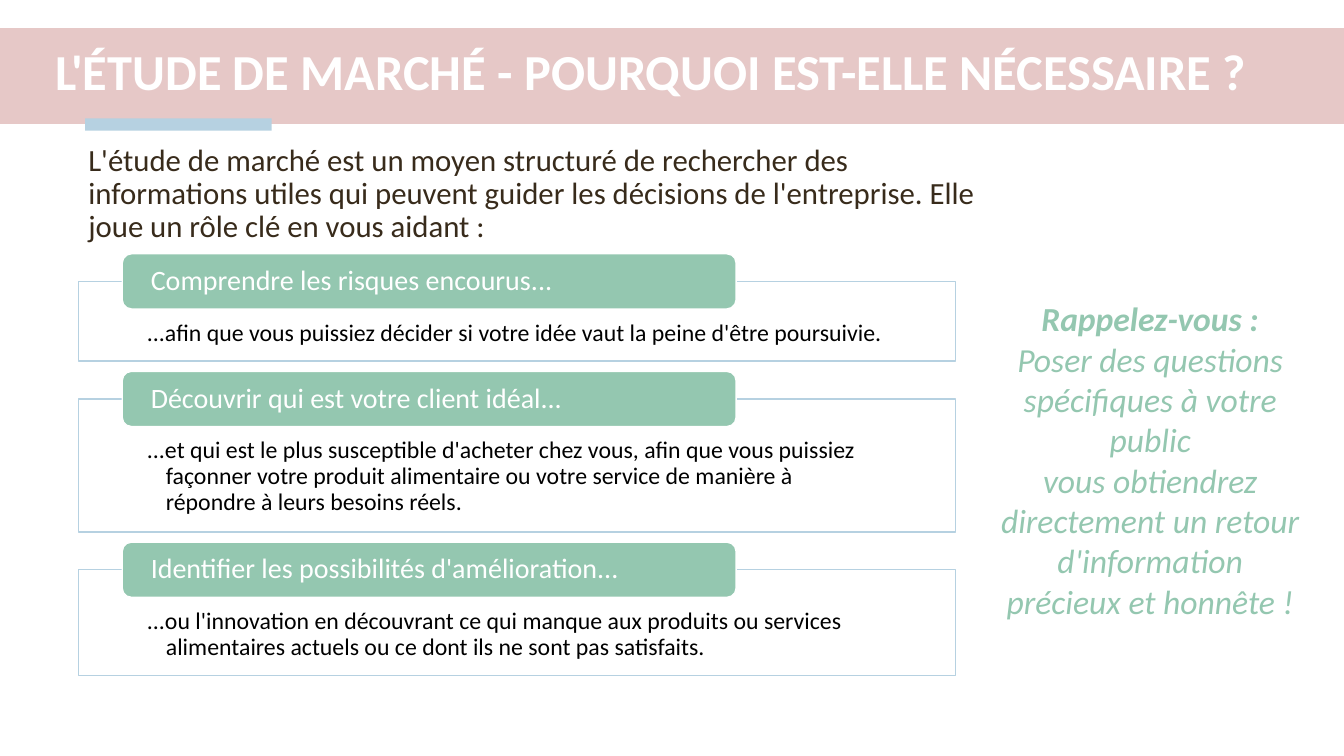
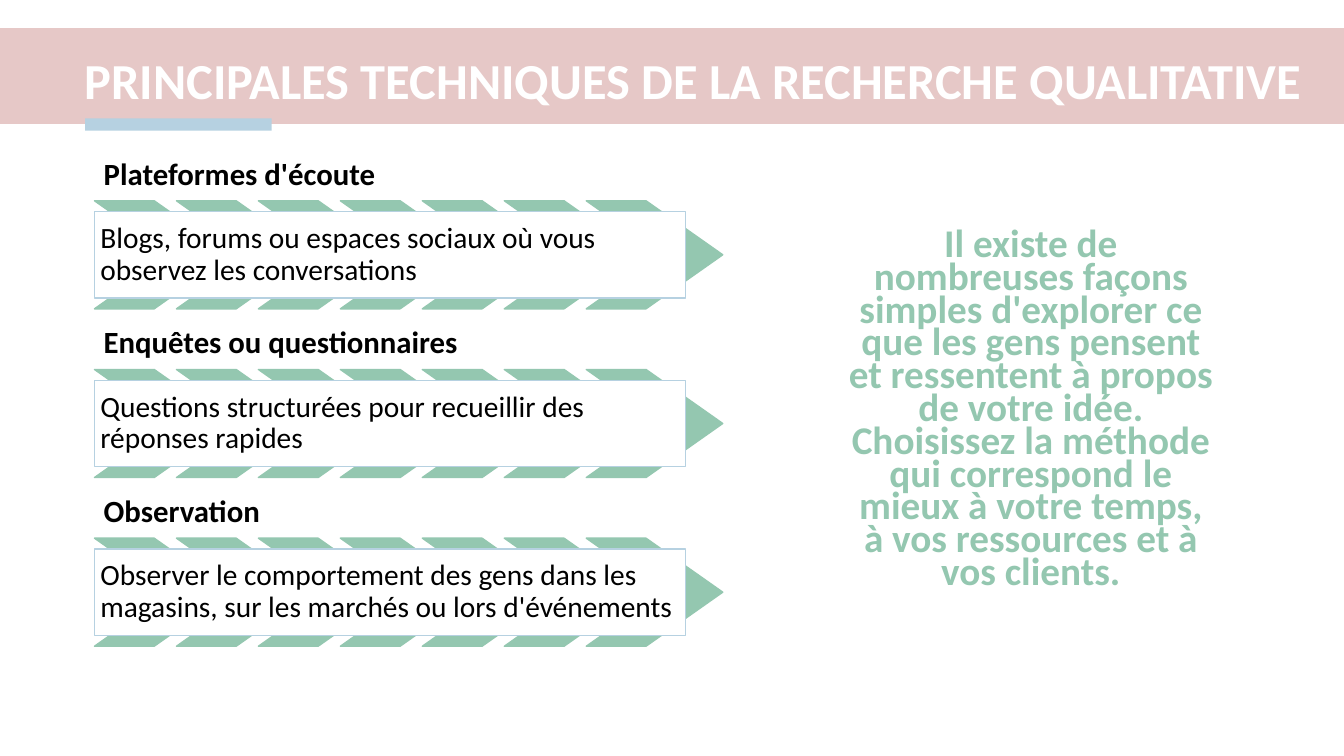
from pptx import Presentation
from pptx.dml.color import RGBColor
from pptx.enum.shapes import MSO_SHAPE
from pptx.enum.text import MSO_ANCHOR, MSO_AUTO_SIZE, PP_ALIGN
from pptx.util import Pt

WHITE = RGBColor(0xFF, 0xFF, 0xFF)
BLACK = RGBColor(0x00, 0x00, 0x00)
PINK = RGBColor(0xE6, 0xC8, 0xC7)
BLUE = RGBColor(0xB6, 0xD1, 0xE1)
GREEN = RGBColor(0x94, 0xC7, 0xB0)
BROWN = RGBColor(0x38, 0x2B, 0x1B)

DEFAULT_INSETS = (7.2, 3.6, 7.2, 3.6)

RISKS = [
    ("Comprendre les risques encourus...", 57,
     "...afin que vous puissiez décider si votre idée vaut la peine d'être poursuivie."),
    ("Découvrir qui est votre client idéal...", 95,
     "...et qui est le plus susceptible d'acheter chez vous, afin que vous puissiez "
     "façonner votre produit alimentaire ou votre service de manière à répondre à "
     "leurs besoins réels."),
    ("Identifier les possibilités d'amélioration...", 75.5,
     "...ou l'innovation en découvrant ce qui manque aux produits ou services "
     "alimentaires actuels ou ce dont ils ne sont pas satisfaits."),
]

TECHNIQUES = [
    ("Plateformes d'écoute",
     "Blogs, forums ou espaces sociaux où vous observez les conversations"),
    ("Enquêtes ou questionnaires",
     "Questions structurées pour recueillir des réponses rapides"),
    ("Observation",
     "Observer le comportement des gens dans les magasins, sur les marchés "
     "ou lors d'événements"),
]


class Deck:
    """Hold the shared style and the slide being built."""

    font_name = "Calibri"

    def __init__(self):
        """Start an empty widescreen presentation."""
        self.presentation = Presentation()
        self.presentation.slide_width = Pt(960)
        self.presentation.slide_height = Pt(540)
        self.slide = None

    def add_slide(self, title, left, top, width):
        """Add a slide with the title band, the accent bar and the title."""
        self.slide = self.presentation.slides.add_slide(self.presentation.slide_layouts[5])
        self.shape(MSO_SHAPE.RECTANGLE, 0, 20, 960, 68.5, PINK)
        self.shape(MSO_SHAPE.RECTANGLE, 60.8, 84.6, 133.2, 8.8, BLUE)
        placeholder = self.slide.shapes.title
        placeholder.left, placeholder.top = Pt(left), Pt(top)
        placeholder.width, placeholder.height = Pt(width), Pt(57)
        self.slide.shapes.element.append(placeholder.element)
        self.fill_text(placeholder, [title], 36, WHITE, bold=True, anchor=MSO_ANCHOR.MIDDLE)

    def shape(self, kind, left, top, width, height, fill, line=None):
        """Add a flat preset shape, outlined when a line colour is given."""
        shape = self.slide.shapes.add_shape(kind, Pt(left), Pt(top), Pt(width), Pt(height))
        shape.shadow.inherit = False
        shape.fill.solid()
        shape.fill.fore_color.rgb = fill
        if line is None:
            shape.line.fill.background()
        else:
            shape.line.color.rgb = line
            shape.line.width = Pt(1)
        return shape

    def text(self, left, top, width, height, lines, size, color, **style):
        """Add a text box."""
        shape = self.slide.shapes.add_textbox(Pt(left), Pt(top), Pt(width), Pt(height))
        self.fill_text(shape, lines, size, color, **style)

    def fill_text(self, shape, lines, size, color, bold=False, italic=False, bold_first=False,
                  align=PP_ALIGN.LEFT, anchor=MSO_ANCHOR.TOP, spacing=0.9,
                  insets=DEFAULT_INSETS, hanging=0):
        """Fill a shape with one paragraph, its lines parted by line breaks."""
        frame = shape.text_frame
        frame.word_wrap = True
        frame.auto_size = MSO_AUTO_SIZE.NONE
        frame.vertical_anchor = anchor
        frame.margin_left, frame.margin_top, frame.margin_right, frame.margin_bottom = map(Pt, insets)
        paragraph = frame.paragraphs[0]
        paragraph.alignment = align
        paragraph.line_spacing = spacing
        if hanging:
            properties = paragraph._p.get_or_add_pPr()
            properties.set("marL", str(Pt(hanging)))
            properties.set("indent", str(-Pt(hanging)))
        for index, line in enumerate(lines):
            if index:
                paragraph.add_line_break()
            run = paragraph.add_run()
            run.text = line
            run.font.name = self.font_name
            run.font.size = Pt(size)
            run.font.color.rgb = color
            run.font.bold = bold or (bold_first and index == 0)
            run.font.italic = italic

    def panel(self, top, height, heading, detail):
        """Add an outlined panel with a rounded heading over its top edge."""
        panel = self.shape(MSO_SHAPE.RECTANGLE, 56, top, 626.5, height, WHITE, BLUE)
        self.fill_text(panel, [detail], 17, BLACK, insets=(49, 28, 49, 9.4), hanging=13.5)
        tab = self.shape(MSO_SHAPE.ROUNDED_RECTANGLE, 87.3, top - 19.7, 438.5, 39.4, GREEN, WHITE)
        self.fill_text(tab, [heading], 20, WHITE, anchor=MSO_ANCHOR.MIDDLE,
                       insets=(18.5, 0, 18.5, 0))

    def technique(self, top, heading, detail):
        """Add a heading above a row of chevrons that carries a text box."""
        self.text(67.5, top, 417, 38, [heading], 22, BLACK, bold=True,
                  anchor=MSO_ANCHOR.BOTTOM, insets=(6.6,) * 4)
        for index in range(7):
            chevron = self.shape(MSO_SHAPE.CHEVRON, 67.5 + index * 58.55, top + 37.7,
                                 97.5, 77.2, GREEN, GREEN)
            chevron.adjustments[0] = 0.71
        box = self.shape(MSO_SHAPE.RECTANGLE, 67.5, top + 45.5, 422, 61.7, WHITE, BLUE)
        self.fill_text(box, [detail], 21, BLACK, anchor=MSO_ANCHOR.MIDDLE, insets=(4.2,) * 4)


def add_reasons(deck):
    """Build the slide on why market research is needed."""
    deck.add_slide("L'ÉTUDE DE MARCHÉ - POURQUOI EST-ELLE NÉCESSAIRE ?", 32.4, 24.5, 886)
    deck.text(56, 100, 663, 81,
              ["L'étude de marché est un moyen structuré de rechercher des informations utiles "
               "qui peuvent guider les décisions de l'entreprise. Elle joue un rôle clé en vous "
               "aidant :"], 22, BROWN, spacing=Pt(23.4))
    deck.text(707.8, 209.5, 227.5, 240,
              ["Rappelez-vous :", "Poser des questions spécifiques à votre public",
               "vous obtiendrez directement un retour d'information précieux et honnête !"],
              24, GREEN, italic=True, bold_first=True, align=PP_ALIGN.CENTER, spacing=1.0)
    top = 201
    for heading, height, detail in RISKS:
        deck.panel(top, height, heading, detail)
        top += height + 27


def add_techniques(deck):
    """Build the slide on qualitative research techniques."""
    deck.add_slide("PRINCIPALES TECHNIQUES DE LA RECHERCHE QUALITATIVE", 53.3, 31, 900.7)
    for index, (heading, detail) in enumerate(TECHNIQUES):
        deck.technique(105.7 + index * 120.5, heading, detail)
    deck.text(597, 162.7, 278.6, 241,
              ["Il existe de nombreuses façons simples d'explorer ce que les gens pensent et "
               "ressentent à propos de votre idée. Choisissez la méthode qui correspond le mieux "
               "à votre temps, à vos ressources et à vos clients."],
              28, GREEN, bold=True, align=PP_ALIGN.CENTER, spacing=Pt(23.4))


def main():
    """Build and save the presentation."""
    deck = Deck()
    add_reasons(deck)
    add_techniques(deck)
    deck.presentation.save("out.pptx")


if __name__ == "__main__":
    main()
